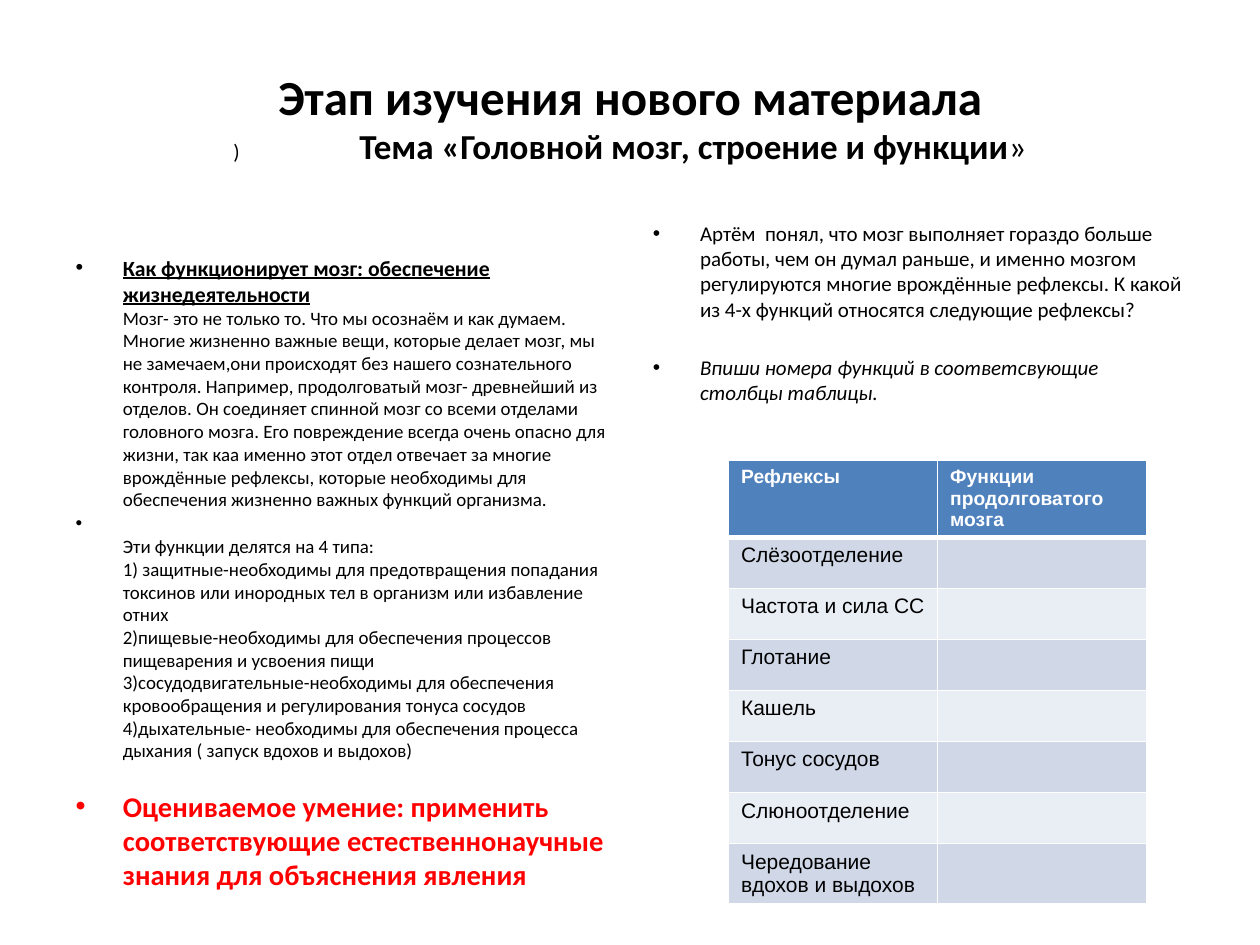
from lxml import etree
from pptx import Presentation
from pptx.dml.color import RGBColor
from pptx.enum.text import MSO_ANCHOR, MSO_AUTO_SIZE, PP_ALIGN
from pptx.oxml.ns import qn
from pptx.util import Pt

CENTER, MIDDLE, NO_FIT = PP_ALIGN.CENTER, MSO_ANCHOR.MIDDLE, MSO_AUTO_SIZE.NONE
BLACK = RGBColor(0x00, 0x00, 0x00)
WHITE = RGBColor(0xFF, 0xFF, 0xFF)
RED = RGBColor(0xFF, 0x00, 0x00)
BLUE = RGBColor(0x4F, 0x81, 0xBD)
BANDS = [RGBColor(0xE9, 0xED, 0xF4), RGBColor(0xD0, 0xD8, 0xE8)]


def place(sp, left, top, width, height):
    sp.left, sp.top, sp.width, sp.height = Pt(left), Pt(top), Pt(width), Pt(height)
    sp.text_frame.auto_size = NO_FIT
    sp.text_frame.word_wrap = True
    return sp.text_frame


def add_text(p, text, size, color=BLACK, name="Calibri", bold=False, italic=False,
             underline=False):
    for i, line in enumerate(text.split("\n")):
        if i:
            # The break carries the text size so that its line is no taller
            p.add_line_break()
            br = p._p.findall(qn("a:br"))[-1]
            etree.SubElement(br, qn("a:rPr"), sz=str(round(size * 100)))
        if line:
            r = p.add_run()
            r.text = line
            f = r.font
            f.size, f.name, f.color.rgb = Pt(size), name, color
            f.bold, f.italic, f.underline = bold, italic, underline


prs = Presentation()
prs.slide_width, prs.slide_height = Pt(720), Pt(540)
s = prs.slides.add_slide(prs.slide_layouts[3])
title, left_body, right_body = s.placeholders

# Title
tf = place(title, 36, 21.6, 648, 90)
tf.vertical_anchor = MIDDLE
p = tf.paragraphs[0]
p.alignment = CENTER
add_text(p, "Этап изучения нового материала\n", 28, bold=True)
add_text(p, ")\t\t", 12)
add_text(p, "Тема «Головной мозг, строение и функции", 20, bold=True)
add_text(p, "»", 20)

# Left column: the reading text
tf = place(left_body, 36, 141.8, 318.2, 305.3)
p = tf.paragraphs[0]
p.space_before = Pt(1)
add_text(p, "Как функционирует мозг: обеспечение жизнедеятельности\n", 12.4,
         bold=True, underline=True)
add_text(p, "Мозг- это не только то. Что мы осознаём и как думаем. Многие жизненно "
         "важные вещи, которые делает мозг, мы не замечаем,они происходят без нашего "
         "сознательного контроля. Например, продолговатый мозг- древнейший из отделов. "
         "Он соединяет спинной мозг со всеми отделами головного мозга. Его повреждение "
         "всегда очень опасно для жизни, так каа именно этот отдел отвечает за многие "
         "врождённые рефлексы, которые необходимы для обеспечения жизненно важных "
         "функций организма.", 10.8)
p = tf.add_paragraph()
p.space_before = Pt(1)
add_text(p, "\nЭти функции делятся на 4 типа:\n"
         "1) защитные-необходимы для предотвращения попадания токсинов или инородных "
         "тел в организм или избавление отних\n"
         "2)пищевые-необходимы для обеспечения процессов пищеварения и усвоения пищи\n"
         "3)сосудодвигательные-необходимы для обеспечения кровообращения и "
         "регулирования тонуса сосудов\n"
         "4)дыхательные- необходимы для обеспечения процесса дыхания "
         "( запуск вдохов и выдохов)", 10.8)
p = tf.add_paragraph()
p.space_before = Pt(15.5)
add_text(p, "Оцениваемое умение: применить соответствующие естественнонаучные знания "
         "для объяснения явления", 16.3, RED, bold=True)

# Right column: the task
tf = place(right_body, 365.8, 122.4, 318.2, 311.8)
p = tf.paragraphs[0]
p.space_before = Pt(1)
add_text(p, "Артём  понял, что мозг выполняет гораздо больше работы, чем он думал "
         "раньше, и именно мозгом регулируются многие врождённые рефлексы. К какой из "
         "4-х функций относятся следующие рефлексы?", 12)
p = tf.add_paragraph()
p.space_before = Pt(19)
add_text(p, "Впиши номера функций в соответсвующие столбцы таблицы.", 12, italic=True)

# Table of reflexes
rows = [("Рефлексы", "Функции продолговатого мозга")] + [
    (reflex, "") for reflex in (
        "Слёзоотделение", "Частота и сила СС", "Глотание", "Кашель",
        "Тонус сосудов", "Слюноотделение", "Чередование вдохов и выдохов")]
heights = [43] + [29.2] * 6 + [34.3]
table = s.shapes.add_table(len(rows), 2, Pt(416.3), Pt(263), Pt(239),
                           Pt(sum(heights))).table
table.first_row = table.horz_banding = False
for i, row in enumerate(rows):
    table.rows[i].height = Pt(heights[i])
    for j, text in enumerate(row):
        cell = table.cell(i, j)
        tcPr = cell._tc.get_or_add_tcPr()
        for side in "LRTB":
            thick = (i, side) in ((0, "B"), (1, "T"))
            ln = etree.SubElement(tcPr, qn("a:ln" + side), w=str(Pt(3 if thick else 1)))
            fill = etree.SubElement(ln, qn("a:solidFill"))
            etree.SubElement(fill, qn("a:srgbClr"), val=str(WHITE))
        cell.fill.solid()
        cell.fill.fore_color.rgb = BANDS[i % 2] if i else BLUE
        add_text(cell.text_frame.paragraphs[0], text, 12 if i else 11,
                 BLACK if i else WHITE, "Arial", bold=i == 0)

prs.save("out.pptx")
